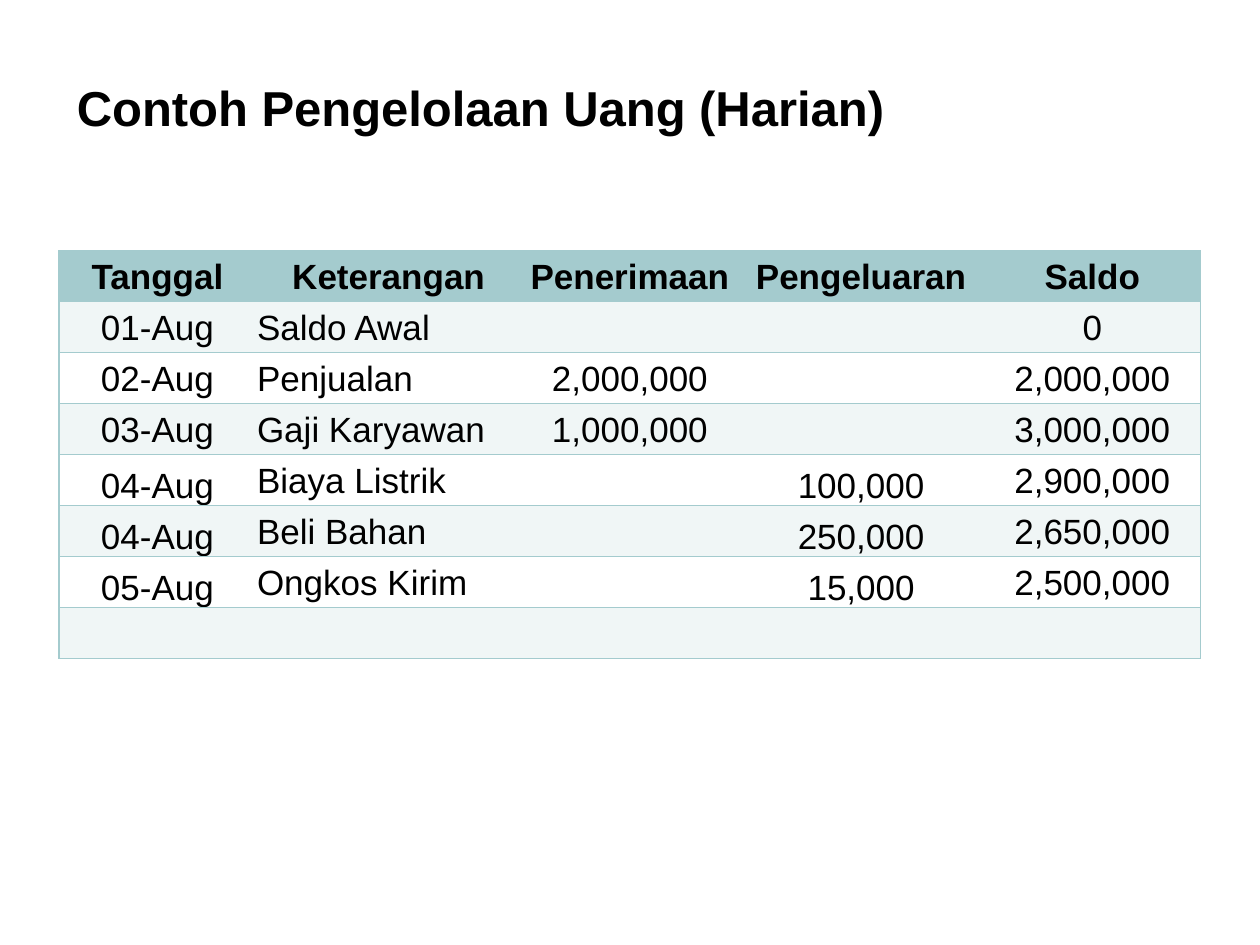
import pptx
import pptx.dml.color
import pptx.enum.text
import pptx.util
import lxml.etree

ALIGN = pptx.enum.text.PP_ALIGN
ANCHOR = pptx.enum.text.MSO_ANCHOR
TEAL, PALE, WHITE, BLACK = "A4CBCE", "F0F6F6", "FFFFFF", "000000"
DRAWING = "{http://schemas.openxmlformats.org/drawingml/2006/main}"


def colour(value):
    return pptx.dml.color.RGBColor.from_string(value)


def write(paragraph, text, align, **font_format):
    paragraph.alignment = align
    run = paragraph.add_run()
    run.text = text
    for name, value in {"name": "Arial", **font_format}.items():
        setattr(run.font, name, value)
    run.font.color.rgb = colour(BLACK)


deck = pptx.Presentation()
deck.slide_width = pptx.util.Inches(10)
deck.slide_height = pptx.util.Inches(7.5)
slide = deck.slides.add_slide(deck.slide_layouts[5])

# Title
heading = slide.shapes.title
for name, inches in {"left": 0.51, "top": 0.25, "width": 9.06, "height": 0.88}.items():
    setattr(heading, name, pptx.util.Inches(inches))
heading.text_frame.vertical_anchor = ANCHOR.BOTTOM
write(heading.text_frame.paragraphs[0], "Contoh Pengelolaan Uang (Harian)",
      ALIGN.LEFT, size=pptx.util.Pt(28), bold=True)

# Daily cash book, closed by an empty row
entries = [
    ("Tanggal", "Keterangan", "Penerimaan", "Pengeluaran", "Saldo"),
    ("01-Aug", "Saldo Awal", "", "", "0"),
    ("02-Aug", "Penjualan", "2,000,000", "", "2,000,000"),
    ("03-Aug", "Gaji Karyawan", "1,000,000", "", "3,000,000"),
    ("04-Aug", "Biaya Listrik", "", "100,000", "2,900,000"),
    ("04-Aug", "Beli Bahan", "", "250,000", "2,650,000"),
    ("05-Aug", "Ongkos Kirim", "", "15,000", "2,500,000"),
    ("",) * 5,
]
column_widths = [1.56, 2.11, 1.72, 1.95, 1.72]
row_height = pptx.util.Inches(3.24 / len(entries))
cash_book = slide.shapes.add_table(
    len(entries), len(column_widths), pptx.util.Inches(0.47), pptx.util.Inches(1.99),
    pptx.util.Inches(sum(column_widths)), row_height * len(entries)).table
for column, width in zip(cash_book.columns, column_widths):
    column.width = pptx.util.Inches(width)

last_column = len(column_widths) - 1
for r, entry in enumerate(entries):
    cash_book.rows[r].height = row_height
    for c, text in enumerate(entry):
        cell = cash_book.cell(r, c)
        # Spending rows set the date and the amount at the bottom
        low = r >= 4 and c in (0, 3)
        cell_format = {
            "margin_left": pptx.util.Inches(0.01),
            "margin_right": pptx.util.Inches(0.01),
            "margin_top": pptx.util.Inches(0.01),
            "margin_bottom": 0,
            "vertical_anchor": ANCHOR.BOTTOM if low else ANCHOR.MIDDLE,
        }
        for name, value in cell_format.items():
            setattr(cell, name, value)

        # Rules between rows and around the table, none between columns
        ruled = {"lnL": c == 0, "lnR": c == last_column, "lnT": True, "lnB": True}
        for side, visible in ruled.items():
            line = lxml.etree.SubElement(cell._tc.get_or_add_tcPr(), DRAWING + side,
                                         w=str(pptx.util.Pt(1)))
            if visible:
                fill = lxml.etree.SubElement(line, DRAWING + "solidFill")
                lxml.etree.SubElement(fill, DRAWING + "srgbClr", val=TEAL)
            else:
                lxml.etree.SubElement(line, DRAWING + "noFill")

        cell.fill.solid()
        cell.fill.fore_color.rgb = colour(TEAL if r == 0 else PALE if r % 2 else WHITE)
        if text:
            align = ALIGN.LEFT if r > 0 and c == 1 else ALIGN.CENTER
            write(cell.text_frame.paragraphs[0], text, align,
                  size=pptx.util.Pt(20), bold=r == 0)

deck.save("out.pptx")
